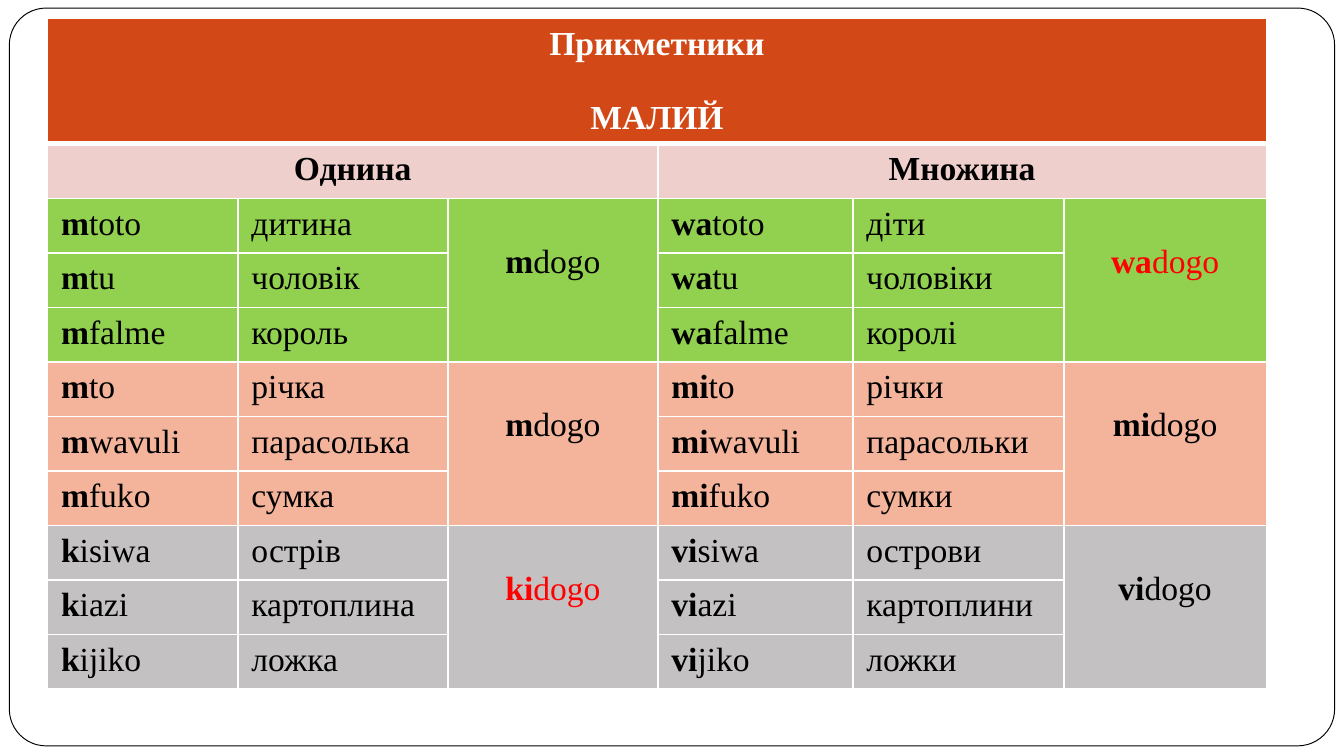
"""Build a slide with a table of Swahili adjectives and noun classes."""
from lxml import etree
from pptx import Presentation
from pptx.dml.color import RGBColor
from pptx.enum.shapes import MSO_SHAPE
from pptx.enum.text import PP_ALIGN
from pptx.oxml.ns import qn
from pptx.util import Pt

ROUND = MSO_SHAPE.ROUNDED_RECTANGLE
LEFT, CENTER = PP_ALIGN.LEFT, PP_ALIGN.CENTER
BLACK = RGBColor(0x00, 0x00, 0x00)
WHITE = RGBColor(0xFF, 0xFF, 0xFF)
RED = RGBColor(0xFF, 0x00, 0x00)
RUST = RGBColor(0xD3, 0x48, 0x17)
PINK = RGBColor(0xEF, 0xCF, 0xCC)
GREEN = RGBColor(0x92, 0xD0, 0x50)
PEACH = RGBColor(0xF4, 0xB3, 0x9B)
GREY = RGBColor(0xC3, 0xC1, 0xC1)

WIDTHS = [102, 112.5, 112.5, 104.5, 113, 108.5]
HEIGHTS = [67] + [29.2] * 10
GROUPS = [
    (GREEN, ("m", BLACK), ("wa", RED), [
        ("m|toto", "дитина", "wa|toto", "діти"),
        ("m|tu", "чоловік", "wa|tu", "чоловіки"),
        ("m|falme", "король", "wa|falme", "королі")]),
    (PEACH, ("m", BLACK), ("mi", BLACK), [
        ("m|to", "річка", "mi|to", "річки"),
        ("m|wavuli", "парасолька", "mi|wavuli", "парасольки"),
        ("m|fuko", "сумка", "mi|fuko", "сумки")]),
    (GREY, ("ki", RED), ("vi", BLACK), [
        ("k|isiwa", "острів", "vi|siwa", "острови"),
        ("k|iazi", "картоплина", "vi|azi", "картоплини"),
        ("k|ijiko", "ложка", "vi|jiko", "ложки")]),
]


def style(cell, fill, bottom=1):
    props = cell._tc.get_or_add_tcPr()
    for side, width in (("L", 1), ("R", 1), ("T", 1), ("B", bottom)):
        line = etree.SubElement(props, qn("a:ln" + side), w=str(Pt(width)))
        solid = etree.SubElement(line, qn("a:solidFill"))
        etree.SubElement(solid, qn("a:srgbClr"), val=str(WHITE))
    cell.fill.solid()
    cell.fill.fore_color.rgb = fill


def write(para, text, color=BLACK, align=LEFT, bold=False):
    para.alignment = align
    head, bar, tail = text.partition("|")
    for part, strong in ((head, bold or bool(bar)), (tail, bold)):
        if part:
            run = para.add_run()
            run.text = part
            run.font.name = "Times New Roman"
            run.font.size = Pt(18)
            run.font.bold = strong
            run.font.color.rgb = color


deck = Presentation()
deck.slide_width, deck.slide_height = Pt(720), Pt(405)
slide = deck.slides.add_slide(deck.slide_layouts[6])

frame = slide.shapes.add_shape(ROUND, Pt(5), Pt(4.3), Pt(710), Pt(395.3))
frame.adjustments[0] = 0.05
frame.shadow.inherit = False
frame.fill.solid()
frame.fill.fore_color.rgb = WHITE
frame.line.color.rgb = BLACK
frame.line.width = Pt(0.5)

table = slide.shapes.add_table(
    len(HEIGHTS), len(WIDTHS), Pt(25.5), Pt(10), Pt(sum(WIDTHS)), Pt(sum(HEIGHTS))).table
for col, width in zip(table.columns, WIDTHS):
    col.width = Pt(width)
for row, height in zip(table.rows, HEIGHTS):
    row.height = Pt(height)

fills = [RUST, PINK] + [group[0] for group in GROUPS for word in group[3]]
for row, fill in enumerate(fills):
    for col in range(len(WIDTHS)):
        style(table.cell(row, col), fill, 3 if row == 0 else 1)

title = table.cell(0, 0)
title.merge(table.cell(0, 5))
top = title.text_frame.paragraphs[0]
write(top, "Прикметники", WHITE, CENTER, True)
top.space_after = Pt(20)
write(title.text_frame.add_paragraph(), "МАЛИЙ", WHITE, CENTER, True)

for col, label in ((0, "Однина"), (3, "Множина")):
    cell = table.cell(1, col)
    cell.merge(table.cell(1, col + 2))
    write(cell.text_frame.paragraphs[0], label, BLACK, CENTER, True)

for index, (fill, single, plural, words) in enumerate(GROUPS):
    first = 2 + 3 * index
    for row, texts in enumerate(words, first):
        for col, text in zip((0, 1, 3, 4), texts):
            write(table.cell(row, col).text_frame.paragraphs[0], text)
    for col, (prefix, color) in ((2, single), (5, plural)):
        cell = table.cell(first, col)
        cell.merge(table.cell(first + 2, col))
        cell.margin_top = Pt(24)
        write(cell.text_frame.paragraphs[0], prefix + "|dogo", color, CENTER)

deck.save("out.pptx")
